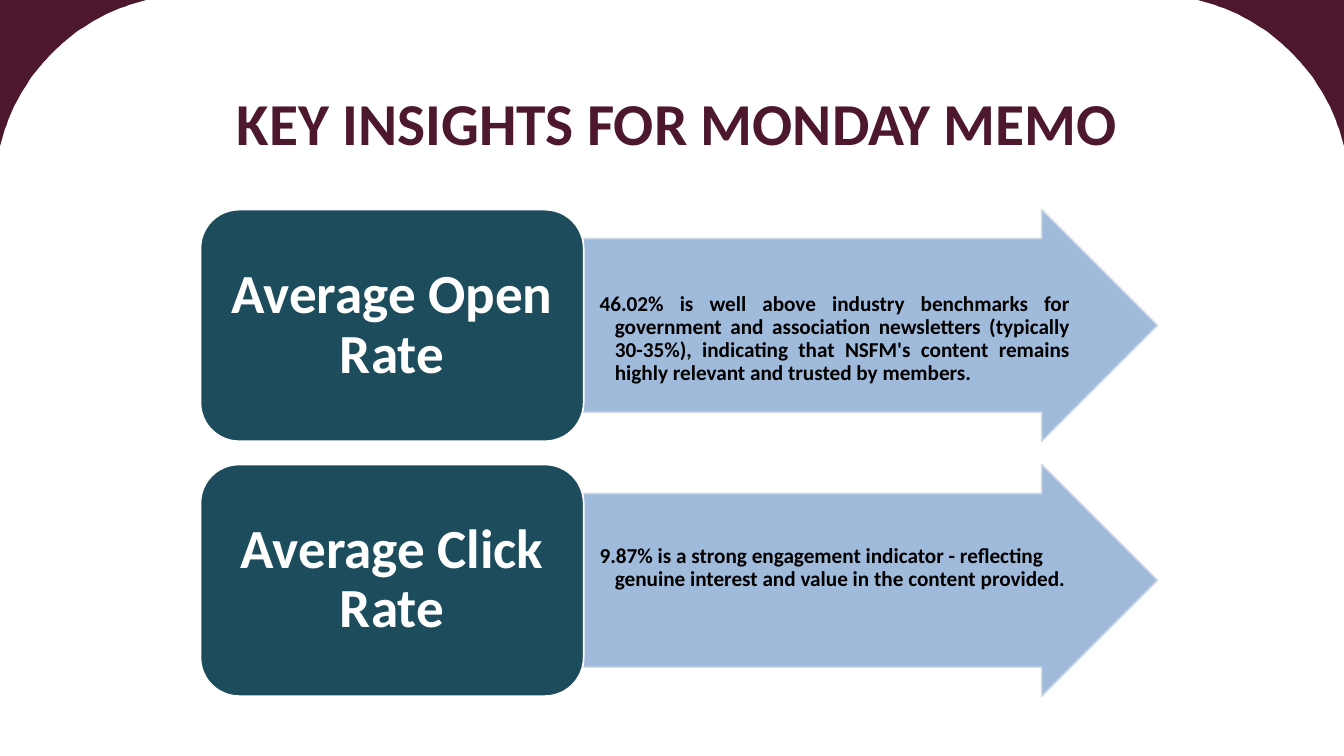
import math
from dataclasses import dataclass

from lxml import etree
from pptx import Presentation
from pptx import util as u
from pptx.dml.color import RGBColor
from pptx.enum import shapes, text
from pptx.oxml import ns

SCALE = 9144  # EMU per px, 100 px to the inch
WIDTH, HEIGHT = 2199, 1237


@dataclass(frozen=True)
class Theme:
    font: str = "Calibri"
    wine: str = "4D182E"
    teal: str = "1D4D5D"
    arrow: str = "95B3D7"
    edge: str = "D0D8E8"
    white: str = "FFFFFF"
    black: str = "000000"
    title_size: int = 70
    label_size: int = 65
    note_size: int = 25
    line_width: int = 2
    arrow_opacity: int = 90


THEME = Theme()

# Label, insight, alignment and distance from box top to insight
INSIGHTS = [
    ("Average Open Rate",
     "46.02% is well above industry benchmarks for government and association "
     "newsletters (typically 30-35%), indicating that NSFM's content remains "
     "highly relevant and trusted by members.",
     text.PP_ALIGN.JUSTIFY, 90),
    ("Average Click Rate",
     "9.87% is a strong engagement indicator - reflecting genuine interest "
     "and value in the content provided.",
     text.PP_ALIGN.LEFT, 85),
]
FIRST_TOP, ROW_PITCH, ROW_HEIGHT = 343, 417, 379
LABEL_LEFT, LABEL_WIDTH = 328, 627
ARROW_LEFT, ARROW_WIDTH = 954, 940
NOTE_WIDTH, NOTE_HEIGHT = 798, 285
CORNER_CENTRE, CORNER_RADIUS, CORNER_STEPS = 315, 324, 48


def px(length):
    return u.Emu(round(length * SCALE))


def apply(target, values):
    for name, value in values.items():
        setattr(target, name, value)


def place(box, left, top, width, height):
    apply(box, {"left": px(left), "top": px(top),
                "width": px(width), "height": px(height)})


def paint(shape, fill, line=None):
    shape.shadow.inherit = False
    shape.fill.solid()
    shape.fill.fore_color.rgb = RGBColor.from_string(fill)
    if line:
        shape.line.color.rgb = RGBColor.from_string(line)
        shape.line.width = u.Pt(THEME.line_width)
    else:
        shape.line.fill.background()


def set_opacity(shape, percent):
    for color in shape.element.spPr.iter(ns.qn("a:srgbClr")):
        alpha = etree.SubElement(color, ns.qn("a:alpha"))
        alpha.set("val", str(percent * 1000))


def write(box, wording, size, color, align, margins, anchor, spacing=1.0):
    """Fill a shape or placeholder with one bold paragraph."""
    frame = box.text_frame
    left, top, right, bottom = map(px, margins)
    apply(frame, {"text": wording, "word_wrap": True,
                  "auto_size": text.MSO_AUTO_SIZE.NONE,
                  "vertical_anchor": anchor,
                  "margin_left": left, "margin_top": top,
                  "margin_right": right, "margin_bottom": bottom})
    para = frame.paragraphs[0]
    apply(para, {"alignment": align, "line_spacing": spacing,
                 "space_before": u.Pt(0)})
    span = para.runs[0]
    apply(span.font, {"name": THEME.font, "size": u.Pt(size), "bold": True})
    span.font.color.rgb = RGBColor.from_string(color)
    return para


def add_corner(page, mirrored):
    """Fill the page corner outside a circular arc."""
    def spot(x, y):
        return (WIDTH - x if mirrored else x), y

    start = math.asin(CORNER_CENTRE / CORNER_RADIUS)
    sweep = 2 * start - math.pi / 2
    angles = [start - sweep * step / CORNER_STEPS
              for step in range(CORNER_STEPS + 1)]
    arc = [spot(CORNER_CENTRE - CORNER_RADIUS * math.cos(angle),
                CORNER_CENTRE - CORNER_RADIUS * math.sin(angle))
           for angle in angles]
    builder = page.shapes.build_freeform(*spot(0, 0), scale=SCALE)
    builder.add_line_segments(arc, close=True)
    paint(builder.convert_to_shape(), THEME.wine)


def add_arrow(page, top):
    arrow = page.shapes.add_shape(
        shapes.MSO_SHAPE.RIGHT_ARROW, px(ARROW_LEFT), px(top),
        px(ARROW_WIDTH), px(ROW_HEIGHT))
    arrow.adjustments[0] = 0.75
    arrow.adjustments[1] = 0.5
    paint(arrow, THEME.arrow, THEME.edge)
    set_opacity(arrow, THEME.arrow_opacity)


def add_label(page, top, wording):
    label = page.shapes.add_shape(
        shapes.MSO_SHAPE.ROUNDED_RECTANGLE, px(LABEL_LEFT), px(top),
        px(LABEL_WIDTH), px(ROW_HEIGHT))
    paint(label, THEME.teal, THEME.white)
    write(label, wording, THEME.label_size, THEME.white, text.PP_ALIGN.CENTER,
          (27, 14, 27, 14), text.MSO_ANCHOR.MIDDLE, 0.9)


def set_note(page, box, top, wording, align, drop):
    """Lay a body placeholder over its arrow, with a hanging indent."""
    page.shapes.element.append(box.element)
    place(box, ARROW_LEFT, top + (ROW_HEIGHT - NOTE_HEIGHT) // 2,
          NOTE_WIDTH, NOTE_HEIGHT)
    para = write(box, wording, THEME.note_size, THEME.black, align,
                 (2, drop, 2, 2), text.MSO_ANCHOR.TOP, 0.9)
    props = para._p.get_or_add_pPr()
    props.set("marL", str(px(50)))
    props.set("indent", str(px(-25)))
    etree.SubElement(props, ns.qn("a:buNone"))


def main():
    deck = Presentation()
    apply(deck, {"slide_width": px(WIDTH), "slide_height": px(HEIGHT)})
    page = deck.slides.add_slide(deck.slide_layouts.get_by_name("Two Content"))
    title, *notes = page.placeholders

    # Page corners
    for mirrored in (True, False):
        add_corner(page, mirrored)

    # Title
    place(title, 68, 97, 2079, 206)
    write(title, "KEY INSIGHTS FOR MONDAY MEMO", THEME.title_size, THEME.wine,
          text.PP_ALIGN.CENTER, (10, 5, 10, 5), text.MSO_ANCHOR.MIDDLE)

    # Insight rows
    for row, (label, insight, align, drop) in enumerate(INSIGHTS):
        top = FIRST_TOP + row * ROW_PITCH
        add_arrow(page, top)
        set_note(page, notes[row], top, insight, align, drop)
        add_label(page, top, label)

    deck.save("out.pptx")


if __name__ == "__main__":
    main()
